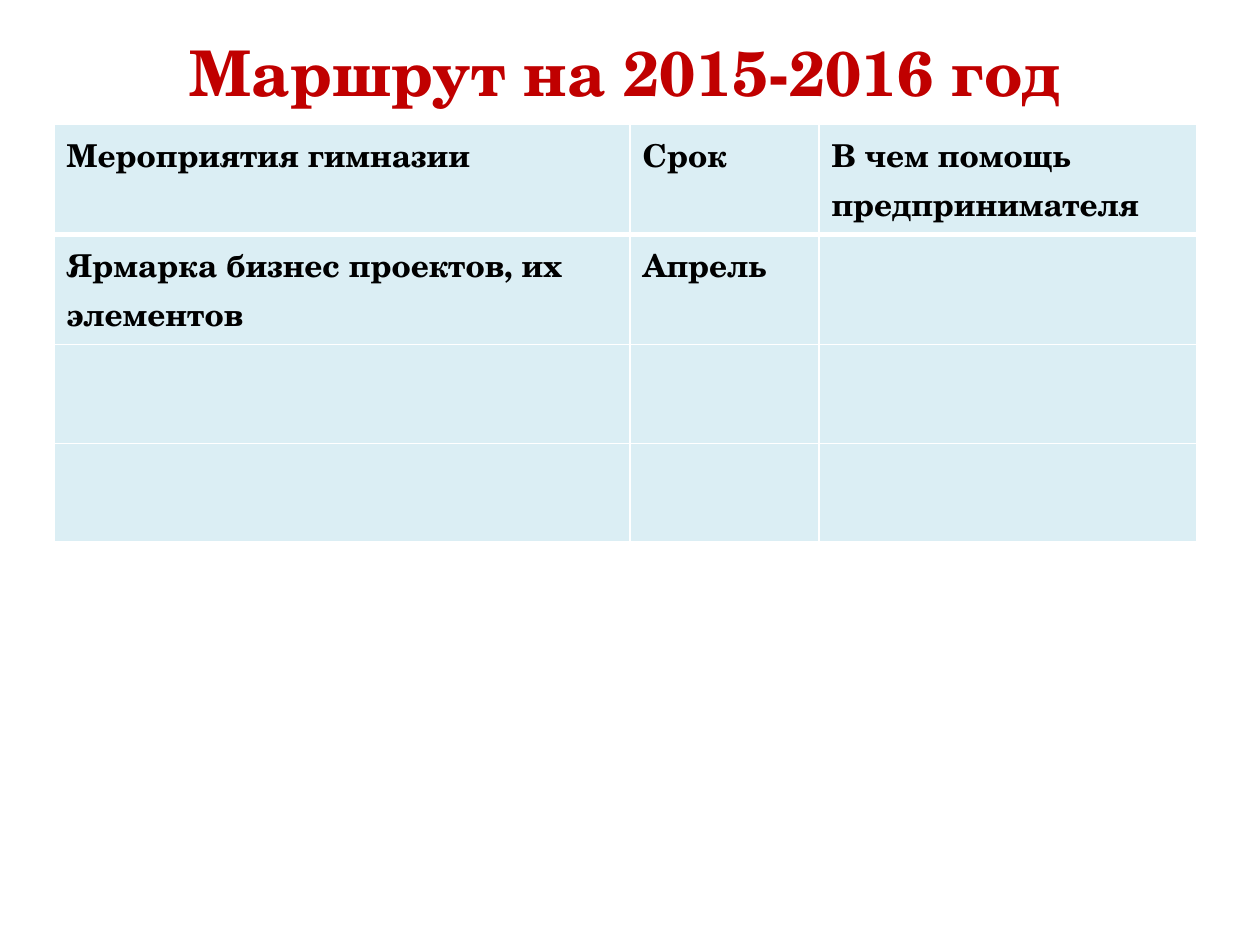
from dataclasses import dataclass

from lxml import etree
from pptx import Presentation
from pptx.dml.color import RGBColor
from pptx.enum.text import MSO_ANCHOR, PP_ALIGN
from pptx.oxml.ns import qn
from pptx.util import Cm, Pt

CENTER = PP_ALIGN.CENTER
MIDDLE = MSO_ANCHOR.MIDDLE
TITLE_ONLY = 5


@dataclass(frozen=True)
class Theme:
    font: str = "TeX Gyre Schola"
    title_size: int = 36
    table_size: int = 18
    title_color: str = "C00000"
    text_color: str = "000000"
    cell_fill: str = "DBEEF4"
    border_color: str = "FFFFFF"
    border_width: int = 1
    header_rule_width: int = 3


class SlideBuilder:
    """Holds the theme and the slide being filled."""

    def __init__(self, slide, theme):
        self.slide = slide
        self.theme = theme

    def format_text(self, frame, size, color):
        formats = {"name": self.theme.font, "size": Pt(size), "bold": True}
        for paragraph in frame.paragraphs:
            for attribute, value in formats.items():
                setattr(paragraph.font, attribute, value)
            for run in paragraph.runs:
                for attribute, value in formats.items():
                    setattr(run.font, attribute, value)
                run.font.color.rgb = RGBColor.from_string(color)

    def title(self, text, left, top, width, height):
        heading = self.slide.shapes.title
        bounds = {"left": left, "top": top, "width": width, "height": height}
        for attribute, value in bounds.items():
            setattr(heading, attribute, Cm(value))
        frame = heading.text_frame
        frame.text = text
        frame.vertical_anchor = MIDDLE
        frame.paragraphs[0].alignment = CENTER
        self.format_text(frame, self.theme.title_size, self.theme.title_color)

    def border(self, cell, widths):
        """Draw cell edges; widths maps an edge tag to points."""
        properties = cell._tc.get_or_add_tcPr()
        for position, (edge, width) in enumerate(widths.items()):
            line = etree.Element(qn(f"a:{edge}"), w=str(Pt(width)))
            fill = etree.SubElement(line, qn("a:solidFill"))
            etree.SubElement(fill, qn("a:srgbClr"), val=self.theme.border_color)
            properties.insert(position, line)

    def table(self, rows, left, top, column_widths, row_height):
        theme = self.theme
        grid = self.slide.shapes.add_table(
            len(rows), len(column_widths), Cm(left), Cm(top),
            Cm(sum(column_widths)), Cm(row_height * len(rows))).table
        for column, width in zip(grid.columns, column_widths):
            column.width = Cm(width)
        for row_index, (row, texts) in enumerate(zip(grid.rows, rows)):
            row.height = Cm(row_height)
            widths = dict.fromkeys(("lnL", "lnR", "lnT", "lnB"), theme.border_width)
            if row_index == 0:
                widths["lnB"] = theme.header_rule_width
            elif row_index == 1:
                widths["lnT"] = theme.header_rule_width
            for cell, text in zip(row.cells, texts):
                cell.text = text
                cell.fill.solid()
                cell.fill.fore_color.rgb = RGBColor.from_string(theme.cell_fill)
                self.format_text(cell.text_frame, theme.table_size, theme.text_color)
                self.border(cell, widths)


def main():
    presentation = Presentation()
    presentation.slide_width, presentation.slide_height = Cm(25.4), Cm(19.05)
    slide = presentation.slides.add_slide(presentation.slide_layouts[TITLE_ONLY])
    builder = SlideBuilder(slide, Theme())

    left = 1.09
    column_widths = (11.61, 3.81, 7.62)
    empty_row = ("",) * len(column_widths)
    route = [
        ("Мероприятия гимназии", "Срок", "В чем помощь предпринимателя"),
        ("Ярмарка бизнес проектов, их элементов", "Апрель", ""),
        empty_row,
        empty_row,
    ]
    builder.title("Маршрут на 2015-2016 год", left, 0.33, sum(column_widths), 2.21)
    builder.table(route, left, 2.51, column_widths, 1.99)
    presentation.save("out.pptx")


if __name__ == "__main__":
    main()
